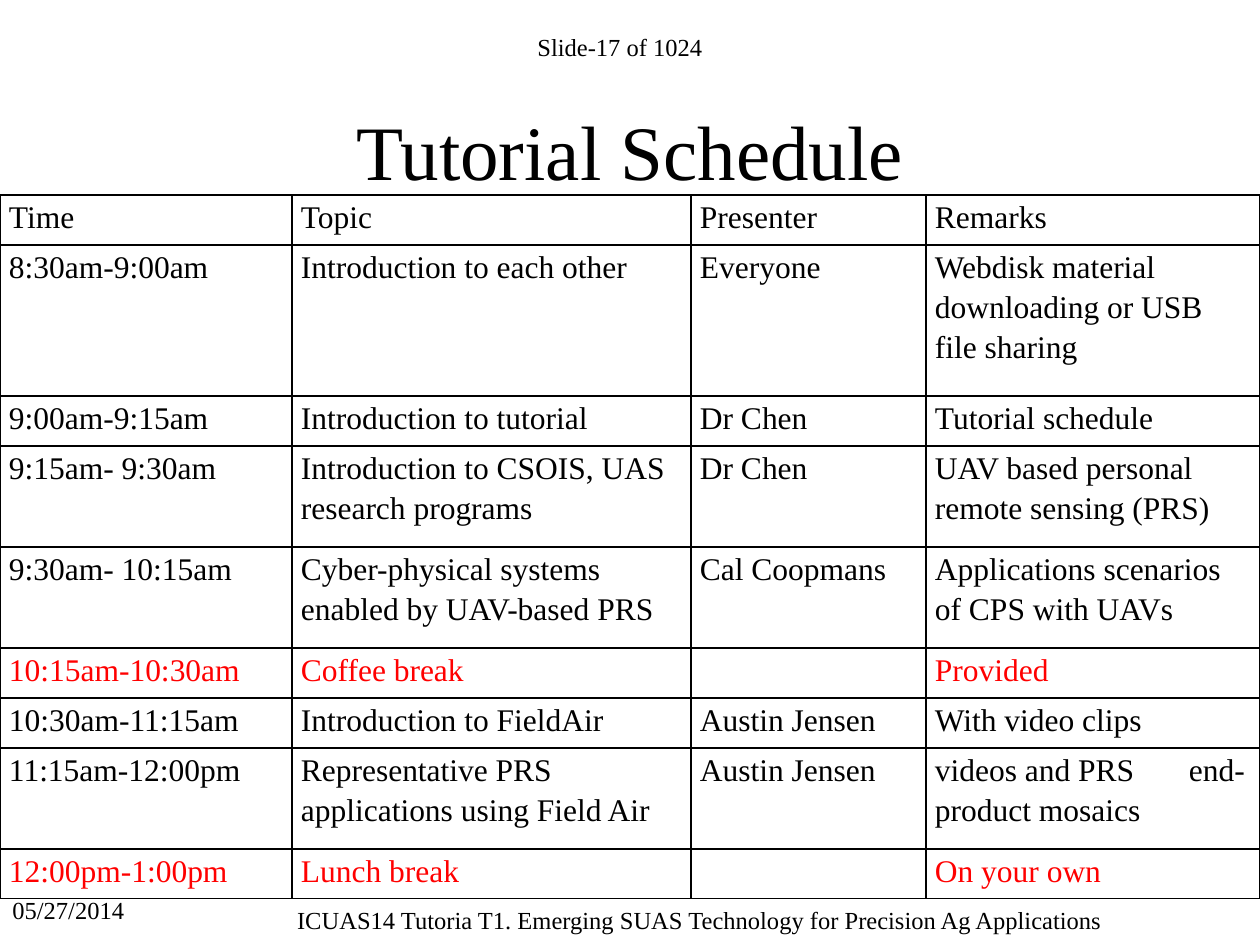
from lxml import etree
from pptx import Presentation
from pptx.dml.color import RGBColor
from pptx.enum.text import MSO_ANCHOR, PP_ALIGN
from pptx.oxml import parse_xml
from pptx.oxml.ns import qn
from pptx.util import Emu, Pt

LEFT, CENTER = PP_ALIGN.LEFT, PP_ALIGN.CENTER
TOP, MIDDLE = MSO_ANCHOR.TOP, MSO_ANCHOR.MIDDLE
BLACK = RGBColor(0, 0, 0)
RED = RGBColor(255, 0, 0)
SERIF = "Times New Roman"
BORDER = (
    '<a:{side} xmlns:a="http://schemas.openxmlformats.org/drawingml/2006/main" '
    'w="12700"><a:solidFill><a:srgbClr val="000000"/></a:solidFill></a:{side}>'
)

COLUMNS = [292, 399, 235, 334]
ROW_UNITS = [1, 3, 1, 2, 2, 1, 1, 2, 1]
TABLE_HEIGHT = 704
TAB_STOP = 254
SCHEDULE = [
    ("Time", "Topic", "Presenter", "Remarks"),
    ("8:30am-9:00am", "Introduction to each other", "Everyone",
     "Webdisk material downloading or USB file sharing"),
    ("9:00am-9:15am", "Introduction to tutorial", "Dr Chen", "Tutorial schedule"),
    ("9:15am- 9:30am", "Introduction to CSOIS, UAS research programs", "Dr Chen",
     "UAV based personal remote sensing (PRS)"),
    ("9:30am- 10:15am", "Cyber-physical systems enabled by UAV-based PRS",
     "Cal Coopmans", "Applications scenarios of CPS with UAVs"),
    ("10:15am-10:30am", "Coffee break", "", "Provided"),
    ("10:30am-11:15am", "Introduction to FieldAir", "Austin Jensen",
     "With video clips"),
    ("11:15am-12:00pm", "Representative PRS applications using Field Air",
     "Austin Jensen", "videos and PRS\tend-product mosaics"),
    ("12:00pm-1:00pm", "Lunch break", "", "On your own"),
]


def px(n):
    return Emu(round(n * 914400 / 126))


class Deck:
    """Holds the text style and the slide being built."""

    def __init__(self, slide, font=SERIF, color=BLACK):
        self.slide, self.font, self.color = slide, font, color

    def run(self, p, text, size, color=None):
        r = p.add_run()
        r.text = text
        r.font.size = Pt(size)
        r.font.name = self.font
        r.font.color.rgb = color or self.color

    def text(self, x, y, w, h, text, size=14, align=CENTER, anchor=TOP):
        tf = self.slide.shapes.add_textbox(px(x), px(y), px(w), px(h)).text_frame
        tf.word_wrap = True
        tf.vertical_anchor = anchor
        p = tf.paragraphs[0]
        p.alignment = align
        self.run(p, text, size)

    def cell(self, cell, text, color):
        cell.margin_left = cell.margin_right = px(9)
        cell.margin_top = cell.margin_bottom = 0
        tcpr = cell._tc.get_or_add_tcPr()
        for side in ("lnL", "lnR", "lnT", "lnB"):
            tcpr.append(parse_xml(BORDER.format(side=side)))
        cell.fill.background()
        p = cell.text_frame.paragraphs[0]
        p.line_spacing = 1.15
        if "\t" in text:
            tabs = etree.SubElement(p._p.get_or_add_pPr(), qn("a:tabLst"))
            etree.SubElement(tabs, qn("a:tab"), pos=str(px(TAB_STOP)), algn="l")
        if text:
            self.run(p, text, 18, color)

    def table(self, x, y, columns, units, height, rows):
        table = self.slide.shapes.add_table(
            len(rows), len(columns), px(x), px(y), px(sum(columns)), px(height)
        ).table
        table.first_row = table.horz_banding = False
        for col, width in zip(table.columns, columns):
            col.width = px(width)
        for row, unit, texts in zip(table.rows, units, rows):
            row.height = px(round(unit * height / sum(units)))
            color = RED if "break" in texts[1] else BLACK
            for cell, text in zip(row.cells, texts):
                self.cell(cell, text, color)


def main():
    prs = Presentation()
    prs.slide_width, prs.slide_height = px(1260), px(945)
    s = Deck(prs.slides.add_slide(prs.slide_layouts[6]))
    s.text(0, 86, 1260, 128, "Tutorial Schedule", 44, anchor=MIDDLE)
    s.text(263, 899, 873, 45,
           "ICUAS14 Tutoria T1. Emerging SUAS Technology for Precision Ag Applications")
    s.text(461, 26, 318, 59, "Slide-17 of 1024")
    s.table(0, 195, COLUMNS, ROW_UNITS, TABLE_HEIGHT, SCHEDULE)
    s.text(0, 889, 262, 55, "05/27/2014", align=LEFT)
    prs.save("out.pptx")


if __name__ == "__main__":
    main()
